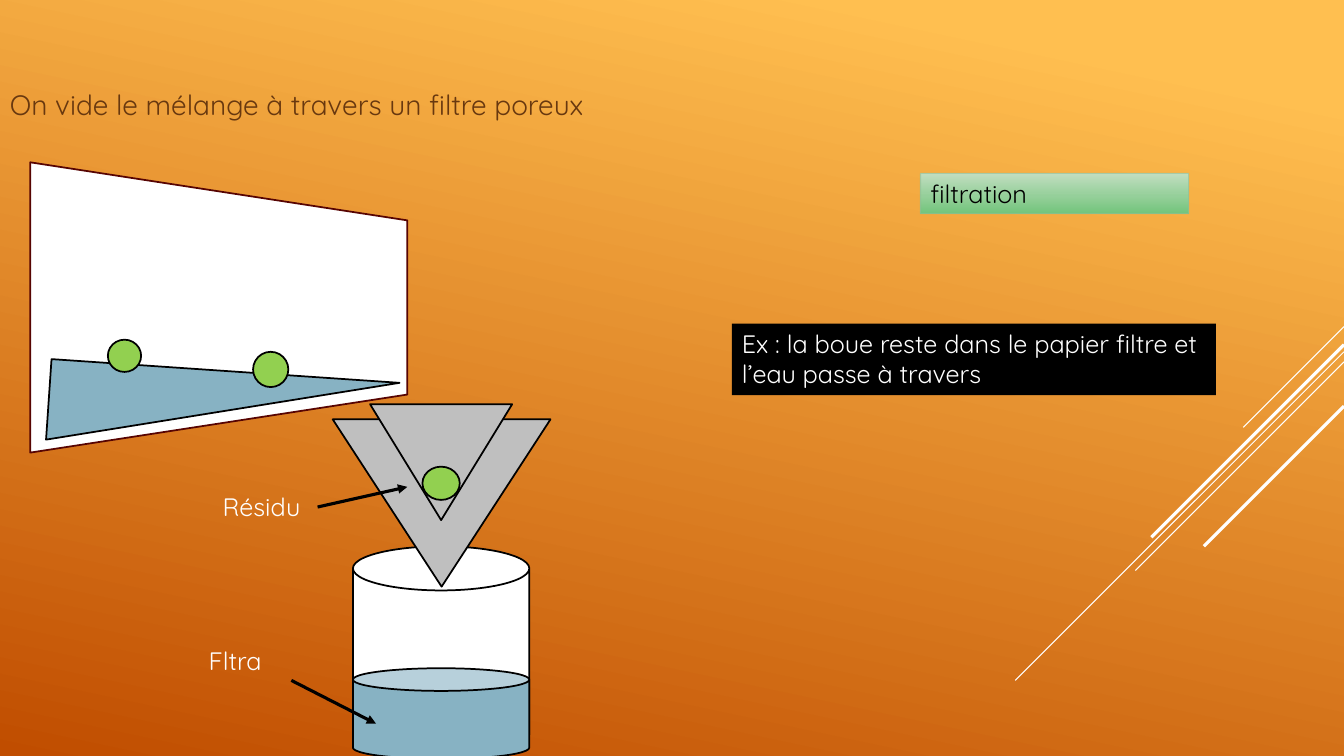
import pptx
import pptx.util
import pptx.dml.color
import pptx.enum.shapes
import pptx.enum.text
import pptx.oxml
import pptx.oxml.ns

SCALE = 9144
COLORS = {
    "white": "FFFFFF", "black": "000000", "gray": "BFBFBF",
    "water": "87B2C3", "green": "92D050", "brown": "68380F",
    "wine": "570402", "sun": "FFBF50", "rust": "C04D00",
    "mint": "C2DEC1", "leaf": "72C47B", "edge": "94BD94",
}
KIND = pptx.enum.shapes.MSO_SHAPE


class Board:
    """Draws styled elements on one slide, with lengths in px."""

    def __init__(self, deck):
        self.font = "Quicksand"
        self.slide = deck.slides.add_slide(deck.slide_layouts[6])
        self.shapes = self.slide.shapes

    def px(self, *sizes):
        return [pptx.util.Emu(size * SCALE) for size in sizes]

    def color(self, name):
        return pptx.dml.color.RGBColor.from_string(COLORS[name])

    def node(self, parent, tag, **attrs):
        child = parent.makeelement(pptx.oxml.ns.qn(tag), attrs)
        parent.append(child)

    def blend(self, fill, angle, *stops):
        fill.gradient()
        fill.gradient_angle = 360 - angle
        for stop, (place, name) in zip(fill.gradient_stops, stops):
            stop.position = place
            stop.color.rgb = self.color(name)

    def shape(self, kind, box, fill, line="black", width=1.25, turn=0, flip=False):
        item = self.shapes.add_shape(kind, *self.px(*box))
        item.shadow.inherit = False
        item.rotation = turn
        if flip:
            item._element.spPr.xfrm.set("flipH", "1")
        item.fill.solid()
        item.fill.fore_color.rgb = self.color(fill)
        if line:
            item.line.color.rgb = self.color(line)
            item.line.width = pptx.util.Pt(width)
        else:
            item.line.fill.background()
        return item

    def line(self, start, end, color, width, arrow=False):
        link = self.shapes.add_connector(
            pptx.enum.shapes.MSO_CONNECTOR.STRAIGHT, *self.px(*start, *end))
        link.line.color.rgb = self.color(color)
        link.line.width = pptx.util.Pt(width)
        if arrow:
            self.node(link.line._get_or_add_ln(), "a:tailEnd", type="triangle")
        self.node(link._element.spPr, "a:effectLst")

    def text(self, item, words, color="white", size=18, grow=True):
        frame = item.text_frame
        frame.word_wrap = True
        frame.vertical_anchor = pptx.enum.text.MSO_ANCHOR.TOP
        if grow:
            frame.auto_size = pptx.enum.text.MSO_AUTO_SIZE.SHAPE_TO_FIT_TEXT
        frame.text = words
        para = frame.paragraphs[0]
        para.alignment = pptx.enum.text.PP_ALIGN.LEFT
        para.font.name = self.font
        para.font.size = pptx.util.Pt(size)
        para.font.color.rgb = self.color(color)
        return frame

    def label(self, box, words):
        self.text(self.shapes.add_textbox(*self.px(*box)), words)

    def title(self, box, words):
        item = self.shapes.add_textbox(*self.px(*box))
        frame = self.text(item, words, "brown", 20, False)
        frame.vertical_anchor = pptx.enum.text.MSO_ANCHOR.MIDDLE
        frame.paragraphs[0].space_before = pptx.util.Pt(4)
        frame.paragraphs[0].space_after = pptx.util.Pt(6)


def main():
    deck = pptx.Presentation()
    deck.slide_width, deck.slide_height = 1333 * SCALE, 750 * SCALE
    board = Board(deck)
    board.blend(board.slide.background.fill, 102, (0.1, "sun"), (1, "rust"))

    for top, run, width in [(324, 100, 0.75), (349, 326, 0.75), (359, 207, 0.75),
                            (342, 191, 2.25), (403, 139, 2.25)]:
        board.line((1333, top), (1333 - run, top + run), "white", width)

    board.shape(KIND.CAN, (350, 542, 175, 208), "white")
    for box in [(330, 416, 216, 166), (367, 401, 141, 115)]:
        board.shape(KIND.ISOSCELES_TRIANGLE, box, "gray", turn=180)

    board.title((0, 0, 934, 206), "On vide le mélange à travers un filtre poreux")

    board.shape(KIND.FLOWCHART_MANUAL_OPERATION, (73, 118, 288, 374),
                "white", "wine", turn=270)
    board.shape(KIND.RIGHT_TRIANGLE, (48, 368, 346, 80), "water",
                turn=183.9, flip=True)
    for box in [(107, 337, 33, 32), (251, 349, 35, 35), (419, 463, 37, 33)]:
        board.shape(KIND.FLOWCHART_CONNECTOR, box, "green")
    board.shape(KIND.CAN, (350, 663, 175, 90), "water")

    for box, words, start, end in [
            ((211, 483, 170, 40), "Résidu", (315, 503), (404, 483)),
            ((197, 635, 185, 40), "Fltra", (289, 675), (373, 718))]:
        board.label(box, words)
        board.line(start, end, "black", 2.25, True)

    note = board.shape(KIND.RECTANGLE, (726, 321, 480, 71), "black", None)
    board.text(note, "Ex : la boue reste dans le papier filtre et l’eau passe à travers")

    tag = board.shape(KIND.RECTANGLE, (913, 172, 266, 40), "mint", "edge", 0.75)
    board.blend(tag.fill, 90, (0, "mint"), (1, "leaf"))
    tint = tag.line._get_or_add_ln().find(".//" + pptx.oxml.ns.qn("a:srgbClr"))
    board.node(tint, "a:alpha", val="60000")
    board.text(tag, "filtration", "black")

    deck.save("out.pptx")


if __name__ == "__main__":
    main()
